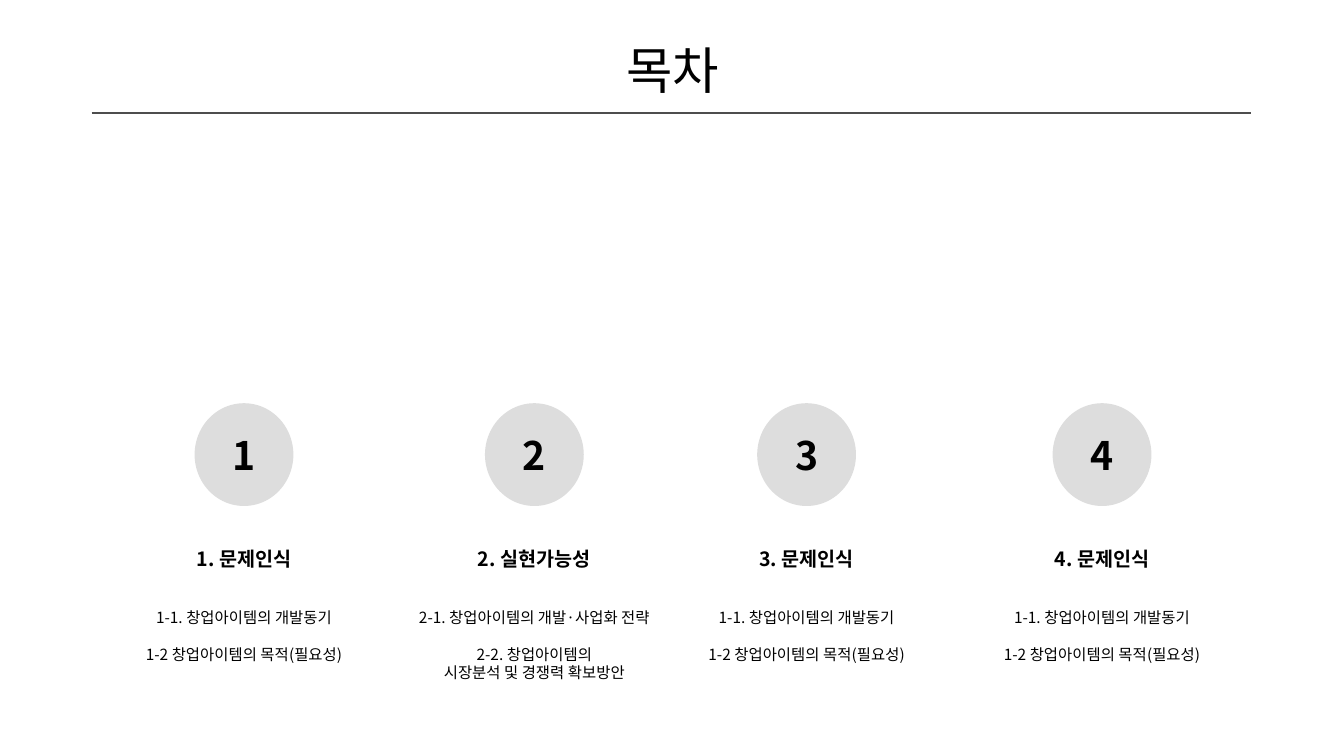
from dataclasses import dataclass

from lxml.etree import SubElement
from pptx import Presentation
from pptx.dml.color import RGBColor
from pptx.enum.shapes import MSO_CONNECTOR, MSO_SHAPE
from pptx.enum.text import MSO_ANCHOR, PP_ALIGN
from pptx.oxml.ns import qn
from pptx.util import Inches, Pt


@dataclass(frozen=True)
class Theme:
    font: str = "Noto Sans CJK KR"
    ink: RGBColor = RGBColor(0x00, 0x00, 0x00)
    rule: RGBColor = RGBColor(0x4D, 0x4D, 0x4D)
    disc: RGBColor = RGBColor(0xDD, 0xDD, 0xDD)
    title: float = 36
    number: float = 28
    heading: float = 14
    item: float = 11
    item_line: float = 13.2


THEME = Theme()

# Centre of each column, heading, items (a line break splits an item)
SECTIONS = [
    (2.42, "1. 문제인식", ["1-1. 창업아이템의 개발동기", "1-2 창업아이템의 목적(필요성)"]),
    (5.3, "2. 실현가능성", ["2-1. 창업아이템의 개발·사업화 전략",
                       "2-2. 창업아이템의\n시장분석 및 경쟁력 확보방안"]),
    (8, "3. 문제인식", ["1-1. 창업아이템의 개발동기", "1-2 창업아이템의 목적(필요성)"]),
    (10.93, "4. 문제인식", ["1-1. 창업아이템의 개발동기", "1-2 창업아이템의 목적(필요성)"]),
]


def write(para, text, size, bold=False):
    para.text = text
    para.alignment = PP_ALIGN.CENTER
    for span in para.runs:
        span.font.size = Pt(size)
        span.font.bold = bold
        span.font.name = THEME.font
        span.font.color.rgb = THEME.ink
        east_asian = SubElement(span.font._element, qn("a:ea"))
        east_asian.set("typeface", THEME.font)


def add_text_box(page, left, top, width, height):
    box = page.shapes.add_textbox(Inches(left), Inches(top), Inches(width), Inches(height))
    box.text_frame.word_wrap = True
    return box.text_frame


def add_title(page, text):
    frame = add_text_box(page, 3.39, 0.34, 6.56, 0.71)
    write(frame.paragraphs[0], text, THEME.title)
    line = page.shapes.add_connector(
        MSO_CONNECTOR.STRAIGHT, Inches(0.91), Inches(1.12), Inches(12.41), Inches(1.12))
    line.line.color.rgb = THEME.rule
    line.line.width = Pt(1)
    SubElement(line._element.spPr, qn("a:effectLst"))


def add_number_disc(page, center, number):
    width = 0.98
    disc = page.shapes.add_shape(
        MSO_SHAPE.FLOWCHART_CONNECTOR,
        Inches(center - width / 2), Inches(4), Inches(width), Inches(1.02))
    disc.shadow.inherit = False
    disc.fill.solid()
    disc.fill.fore_color.rgb = THEME.disc
    disc.line.fill.background()
    disc.text_frame.vertical_anchor = MSO_ANCHOR.MIDDLE
    write(disc.text_frame.paragraphs[0], str(number), THEME.number, bold=True)


def add_section_text(page, center, heading, items):
    width = 3.63
    lines = sum(len(item.split("\n")) for item in items)
    frame = add_text_box(page, center - width / 2, 5.38, width, 0.88 + 0.19 * lines)
    write(frame.paragraphs[0], heading, THEME.heading, bold=True)
    for index, item in enumerate(items):
        for row, text in enumerate(item.split("\n")):
            para = frame.add_paragraph()
            write(para, text, THEME.item)
            para.line_spacing = Pt(THEME.item_line)
            # Two free lines under the heading, one between items
            if row == 0:
                para.space_before = Pt(THEME.item_line * (2 if index == 0 else 1))


def main():
    deck = Presentation()
    deck.slide_width, deck.slide_height = Inches(13.33), Inches(7.5)
    page = deck.slides.add_slide(deck.slide_layouts[6])

    # Title and rule
    add_title(page, "목차")

    # Numbered sections
    for number, (center, heading, items) in enumerate(SECTIONS, start=1):
        add_number_disc(page, center, number)
        add_section_text(page, center, heading, items)

    deck.save("out.pptx")


if __name__ == "__main__":
    main()
